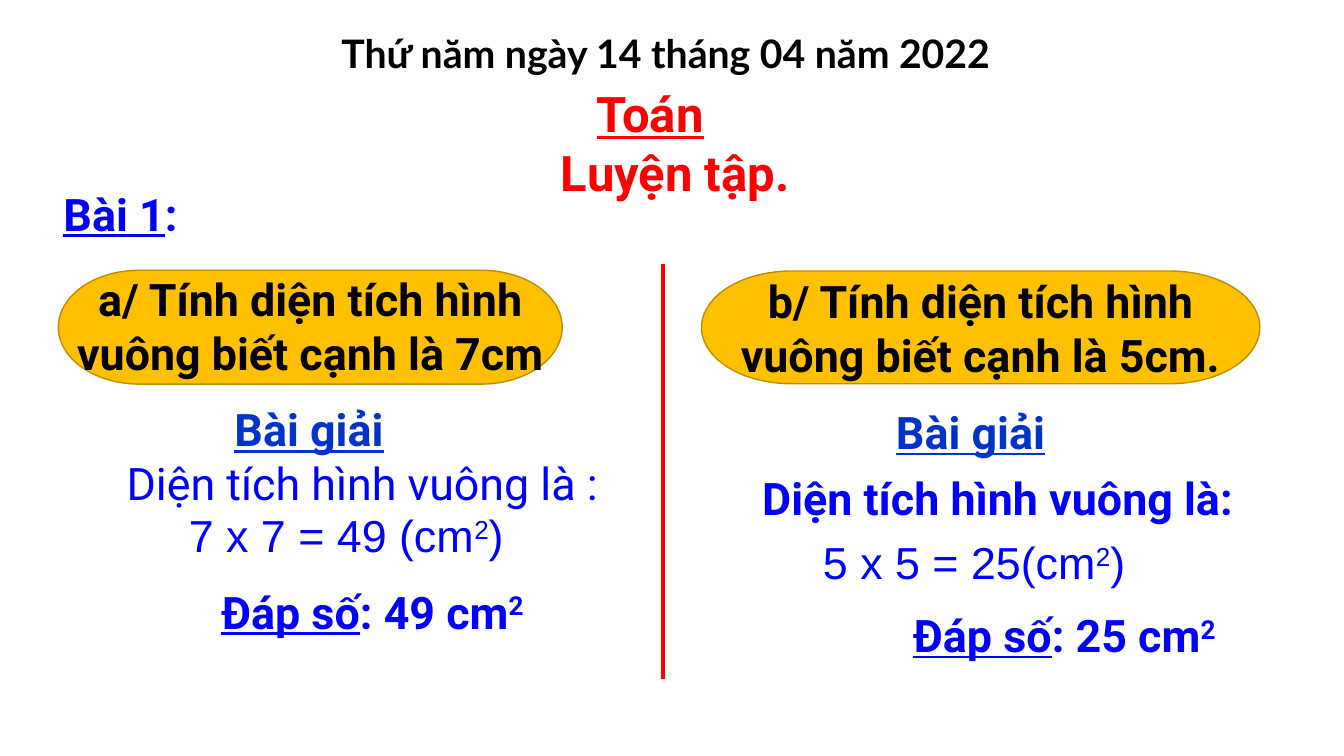
from pptx import Presentation
from pptx import util as u
from pptx.dml.color import RGBColor
from pptx.enum import shapes, text
from pptx.oxml.ns import qn
from lxml import etree

Cm = u.Cm
BLACK = RGBColor(0x00, 0x00, 0x00)
RED = RGBColor(0xFF, 0x00, 0x00)
BLUE = RGBColor(0x00, 0x00, 0xFF)
HEADING_BLUE = RGBColor(0x00, 0x33, 0xCC)
AMBER = RGBColor(0xFF, 0xC0, 0x00)
AMBER_EDGE = RGBColor(0xBD, 0x8E, 0x00)
LEFT, CENTER = text.PP_ALIGN.LEFT, text.PP_ALIGN.CENTER


def add_run(p, content, color, size=32, font="Roboto", bold=True,
            underline=False, superscript=False):
    r = p.add_run()
    r.text = content
    f = r.font
    f.name, f.size, f.bold, f.underline = font, u.Pt(size), bold, underline
    f.color.rgb = color
    if superscript:
        r._r.get_or_add_rPr().set("baseline", "30000")


def add_text(slide, box, align=CENTER, wrap=True):
    """Add a text box and return its first paragraph."""
    tf = slide.shapes.add_textbox(*map(Cm, box)).text_frame
    tf.word_wrap = wrap
    p = tf.paragraphs[0]
    p.alignment = align
    return p


def add_pill(slide, box):
    sp = slide.shapes.add_shape(
        shapes.MSO_SHAPE.FLOWCHART_TERMINATOR, *map(Cm, box))
    sp.shadow.inherit = False
    sp.fill.solid()
    sp.fill.fore_color.rgb = AMBER
    sp.line.color.rgb = AMBER_EDGE
    sp.line.width = u.Pt(1)
    return sp


def add_divider(slide, x, top, bottom):
    line = slide.shapes.add_connector(
        shapes.MSO_CONNECTOR.STRAIGHT, Cm(x), Cm(top), Cm(x), Cm(bottom))
    line.line.color.rgb = RED
    line.line.width = u.Pt(3)
    etree.SubElement(line._element.spPr, qn("a:effectLst"))


def fill_title(title):
    title.left, title.top, title.width, title.height = map(
        Cm, (10.62, 1.93, 11.53, 3.33))
    tf = title.text_frame
    tf.auto_size = text.MSO_AUTO_SIZE.NONE
    tf.vertical_anchor = text.MSO_ANCHOR.TOP
    tf.margin_left = tf.margin_right = Cm(0.33)
    tf.margin_top = tf.margin_bottom = Cm(0.18)
    subject, lesson = tf.paragraphs[0], tf.add_paragraph()
    subject.alignment = lesson.alignment = CENTER
    add_run(subject, "Toán", RED, size=35, underline=True)
    add_run(lesson, "Luyện tập.", RED, size=35)
    # The lesson name sits a little to the right of the subject
    lesson._p.get_or_add_pPr().set("marL", str(Cm(1.27)))


def add_solution(slide, heading_box, lead_box, lead, lead_bold,
                 sum_box, working, answer_box, answer):
    p = add_text(slide, heading_box, LEFT)
    add_run(p, "Bài giải", HEADING_BLUE, underline=True)

    p = add_text(slide, lead_box)
    add_run(p, lead, BLUE, bold=lead_bold)

    p = add_text(slide, sum_box, wrap=False)
    arial = dict(font="Arial", bold=False)
    add_run(p, working, BLUE, **arial)
    add_run(p, "2", BLUE, superscript=True, **arial)
    add_run(p, ")", BLUE, **arial)

    p = add_text(slide, answer_box, wrap=False)
    add_run(p, "Đáp số", BLUE, underline=True)
    add_run(p, answer, BLUE)
    add_run(p, "2", BLUE, superscript=True)


def main():
    prs = Presentation()
    prs.slide_width, prs.slide_height = Cm(33.87), Cm(19.05)
    slide = prs.slides.add_slide(prs.slide_layouts[5])

    # Date, title and exercise number
    p = add_text(slide, (5.74, 0.61, 22.07, 1.45))
    add_run(p, "Thứ năm ngày 14 tháng 04 năm 2022", BLACK, 28, "Lato")
    fill_title(slide.shapes.title)
    p = add_text(slide, (1.35, 4.57, 3.78, 1.63), LEFT)
    add_run(p, "Bài 1", BLUE, underline=True)
    add_run(p, ":", BLUE)

    add_divider(slide, 16.71, 6.65, 17.12)

    # Questions: the first one is wider than its pill
    add_pill(slide, (1.47, 6.81, 12.7, 2.87))
    p = add_text(slide, (0.84, 6.73, 13.97, 3))
    add_run(p, "a/ Tính diện tích hình vuông biết cạnh là 7cm", BLACK)
    pill = add_pill(slide, (17.68, 6.83, 14.07, 2.84))
    p = pill.text_frame.paragraphs[0]
    p.alignment = CENTER
    add_run(p, "b/ Tính diện tích hình vuông biết cạnh là 5cm.", BLACK)

    # Solutions
    add_solution(slide, (5.66, 10.01, 4.7, 1.63),
                 (2.34, 11.35, 13.59, 1.47), "Diện tích hình vuông là :", False,
                 (4.14, 12.67, 8.86, 1.63), " 7 x 7 = 49 (cm",
                 (5.08, 14.6, 8.61, 1.63), ": 49 cm")
    add_solution(slide, (22.33, 10.08, 5.89, 1.63),
                 (18.21, 11.73, 13.87, 1.47), "Diện tích hình vuông là:", True,
                 (20.42, 13.36, 8.26, 1.63), "5 x 5 = 25(cm",
                 (22.5, 15.19, 8.64, 1.63), ": 25 cm")

    prs.save("out.pptx")


if __name__ == "__main__":
    main()
